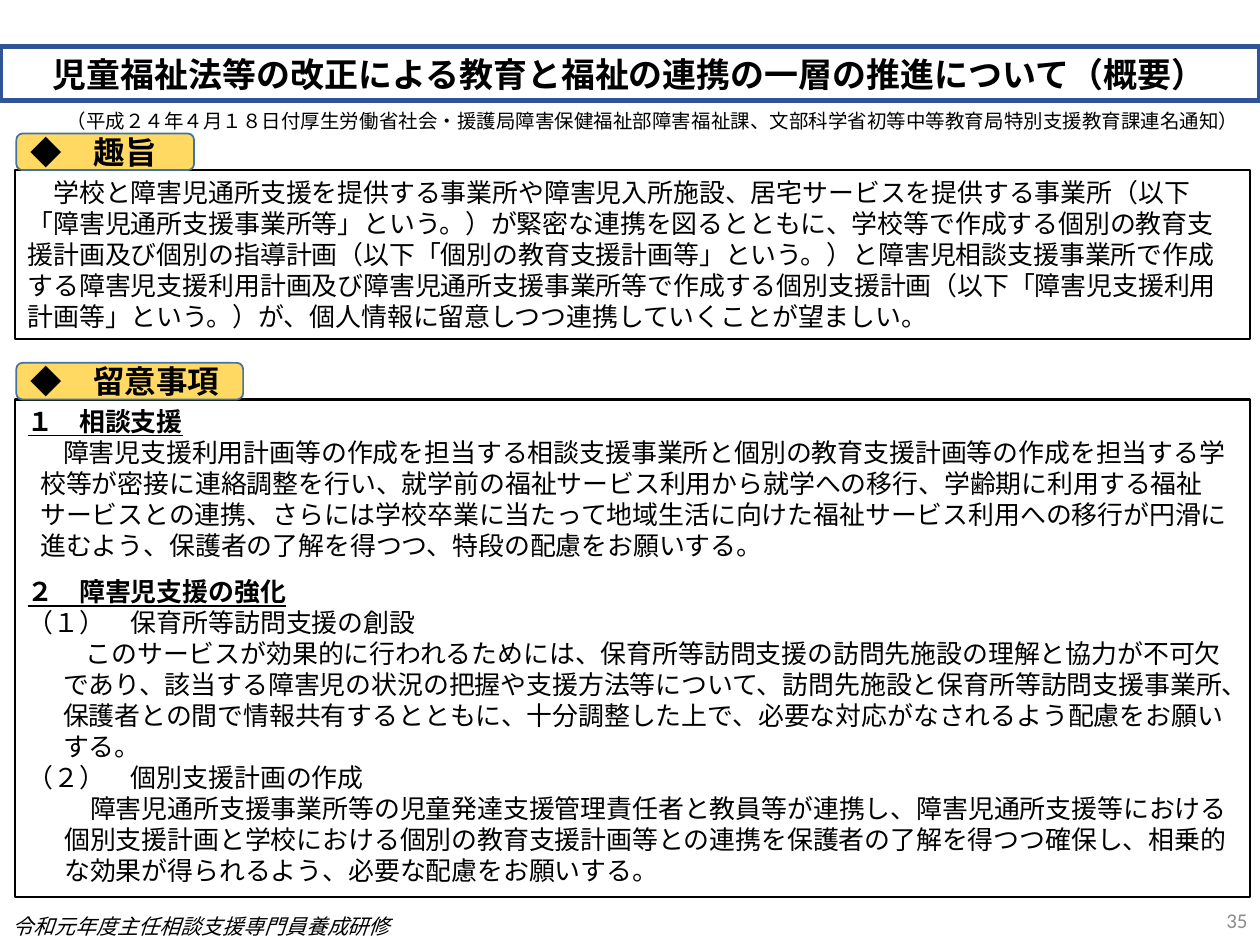
from dataclasses import dataclass

from lxml.etree import SubElement
from pptx import Presentation
from pptx.dml.color import RGBColor
from pptx.enum.lang import MSO_LANGUAGE_ID as Language
from pptx.enum.shapes import MSO_SHAPE as Shape
from pptx.enum.text import MSO_ANCHOR as Anchor, MSO_AUTO_SIZE as AutoSize, PP_ALIGN as Align
from pptx.oxml.ns import qn
from pptx.util import Inches, Pt

COLUMNS, ROWS = 100, 75
CELL = Inches(0.1)


@dataclass(frozen=True)
class Theme:
    latin: str = "Calibri"
    japanese: str = "Noto Sans CJK JP"
    ink: str = "000000"
    muted: str = "8C8C8C"
    title_line: str = "2F5597"
    tag_fill: str = "FFD961"
    tag_line: str = "43739E"
    title_size: float = 19.4
    tag_size: float = 18
    body_size: float = 14.8
    line_pitch: float = 17.7
    section_gap: float = 8.9
    footer_size: float = 12
    source_size: float = 11.1


@dataclass(frozen=True)
class Item:
    text: str
    left: float = 0
    first: float = 0
    heading: bool = False
    gap: float = 0


THEME = Theme()

TITLE = "児童福祉法等の改正による教育と福祉の連携の一層の推進について（概要）"
SOURCE = ("（平成２４年４月１８日付厚生労働省社会・援護局障害保健福祉部障害福祉課、"
          "文部科学省初等中等教育局特別支援教育課連名通知）")
FOOTER = "令和元年度主任相談支援専門員養成研修"

PURPOSE = [Item(
    "　学校と障害児通所支援を提供する事業所や障害児入所施設、居宅サービスを提供する事業所（以下"
    "「障害児通所支援事業所等」という。）が緊密な連携を図るとともに、学校等で作成する個別の教育支"
    "援計画及び個別の指導計画（以下「個別の教育支援計画等」という。）と障害児相談支援事業所で作成"
    "する障害児支援利用計画及び障害児通所支援事業所等で作成する個別支援計画（以下「障害児支援利用"
    "計画等」という。）が、個人情報に留意しつつ連携していくことが望ましい。")]

NOTES = [
    Item("１　相談支援", heading=True),
    Item("障害児支援利用計画等の作成を担当する相談支援事業所と個別の教育支援計画等の作成を担当する学"
         "校等が密接に連絡調整を行い、就学前の福祉サービス利用から就学への移行、学齢期に利用する福祉"
         "サービスとの連携、さらには学校卒業に当たって地域生活に向けた福祉サービス利用への移行が円滑に"
         "進むよう、保護者の了解を得つつ、特段の配慮をお願いする。", left=1, first=1.8),
    Item("２　障害児支援の強化", heading=True, gap=THEME.section_gap),
    Item("（１）　保育所等訪問支援の創設"),
    Item("このサービスが効果的に行われるためには、保育所等訪問支援の訪問先施設の理解と協力が不可欠"
         "であり、該当する障害児の状況の把握や支援方法等について、訪問先施設と保育所等訪問支援事業所、"
         "保護者との間で情報共有するとともに、十分調整した上で、必要な対応がなされるよう配慮をお願い"
         "する。", left=2.8, first=1.8),
    Item("（２）　個別支援計画の作成"),
    Item("　障害児通所支援事業所等の児童発達支援管理責任者と教員等が連携し、障害児通所支援等における"
         "個別支援計画と学校における個別の教育支援計画等との連携を保護者の了解を得つつ確保し、相乗的"
         "な効果が得られるよう、必要な配慮をお願いする。", left=2.9),
]


def cells(*counts):
    return [round(count * CELL) for count in counts]


def place(box, area):
    box.left, box.top, box.width, box.height = cells(*area)


def outline(box, color, width):
    box.line.color.rgb = RGBColor.from_string(color)
    box.line.width = Pt(width)


def style_runs(para, size, color=THEME.ink, **flags):
    """Format every run; flags are font attributes such as bold."""
    for span in para.runs:
        font = span.font
        font.name, font.size = THEME.latin, Pt(size)
        font.color.rgb = RGBColor.from_string(color)
        font.language_id = Language.JAPANESE
        for name, value in flags.items():
            setattr(font, name, value)
        latin = font._element.find(qn("a:latin"))
        east_asian = SubElement(font._element, qn("a:ea"), typeface=THEME.japanese)
        latin.addnext(east_asian)


def write_line(box, text, size, color=THEME.ink, align=Align.LEFT, **flags):
    frame = box.text_frame
    frame.text = text
    frame.word_wrap = True
    frame.auto_size = AutoSize.NONE
    frame.vertical_anchor = Anchor.MIDDLE
    frame.margin_top = frame.margin_bottom = 0
    para = frame.paragraphs[0]
    para.alignment = align
    style_runs(para, size, color, **flags)


def add_label(slide, area, text, size, **style):
    write_line(slide.shapes.add_textbox(*cells(*area)), text, size, **style)


def add_tag(slide, area, text):
    tag = slide.shapes.add_shape(Shape.ROUNDED_RECTANGLE, *cells(*area))
    tag.shadow.inherit = False
    tag.fill.solid()
    tag.fill.fore_color.rgb = RGBColor.from_string(THEME.tag_fill)
    outline(tag, THEME.tag_line, 1)
    write_line(tag, text, THEME.tag_size, bold=True)


def fill_body(box, area, items):
    """Turn a body placeholder into a framed box of unbulleted paragraphs."""
    place(box, area)
    outline(box, THEME.ink, 1.5)
    frame = box.text_frame
    frame.text = "\n".join(item.text for item in items)
    frame.word_wrap = True
    frame.auto_size = AutoSize.NONE
    frame.vertical_anchor = Anchor.TOP
    for para, item in zip(frame.paragraphs, items):
        para.alignment = Align.LEFT
        para.line_spacing = Pt(THEME.line_pitch)
        para.space_before, para.space_after = Pt(item.gap), Pt(0)
        properties = para._p.get_or_add_pPr()
        left, first = cells(item.left, item.first)
        properties.set("marL", str(left))
        properties.set("indent", str(first))
        SubElement(properties, qn("a:buNone"))
        style_runs(para, THEME.body_size, bold=item.heading, underline=item.heading)


def main():
    deck = Presentation()
    deck.slide_width, deck.slide_height = cells(COLUMNS, ROWS)
    slide = deck.slides.add_slide(deck.slide_layouts.get_by_name("Two Content"))
    title, purpose, notes = slide.placeholders

    place(title, (0, 3.7, COLUMNS, 4.3))
    outline(title, THEME.title_line, 3)
    write_line(title, TITLE, THEME.title_size, align=Align.CENTER, bold=True)
    add_label(slide, (4.3, 7, 95.7, 5.1), SOURCE, THEME.source_size)

    sections = [
        (purpose, "◆　趣旨", 14.1, 13.5, 13.4, PURPOSE),
        (notes, "◆　留意事項", 18, 31.7, 39.5, NOTES),
    ]
    for body, heading, tag_width, top, height, items in sections:
        fill_body(body, (1.2, top, 98, height), items)
        add_tag(slide, (1.3, top - 2.9, tag_width, 2.9), heading)

    add_label(slide, (0, 72, 39.4, 3), FOOTER, THEME.footer_size, italic=True)
    add_label(slide, (77.5, 71, 22.5, 4), "35", THEME.footer_size,
              color=THEME.muted, align=Align.RIGHT)
    deck.save("out.pptx")


if __name__ == "__main__":
    main()
